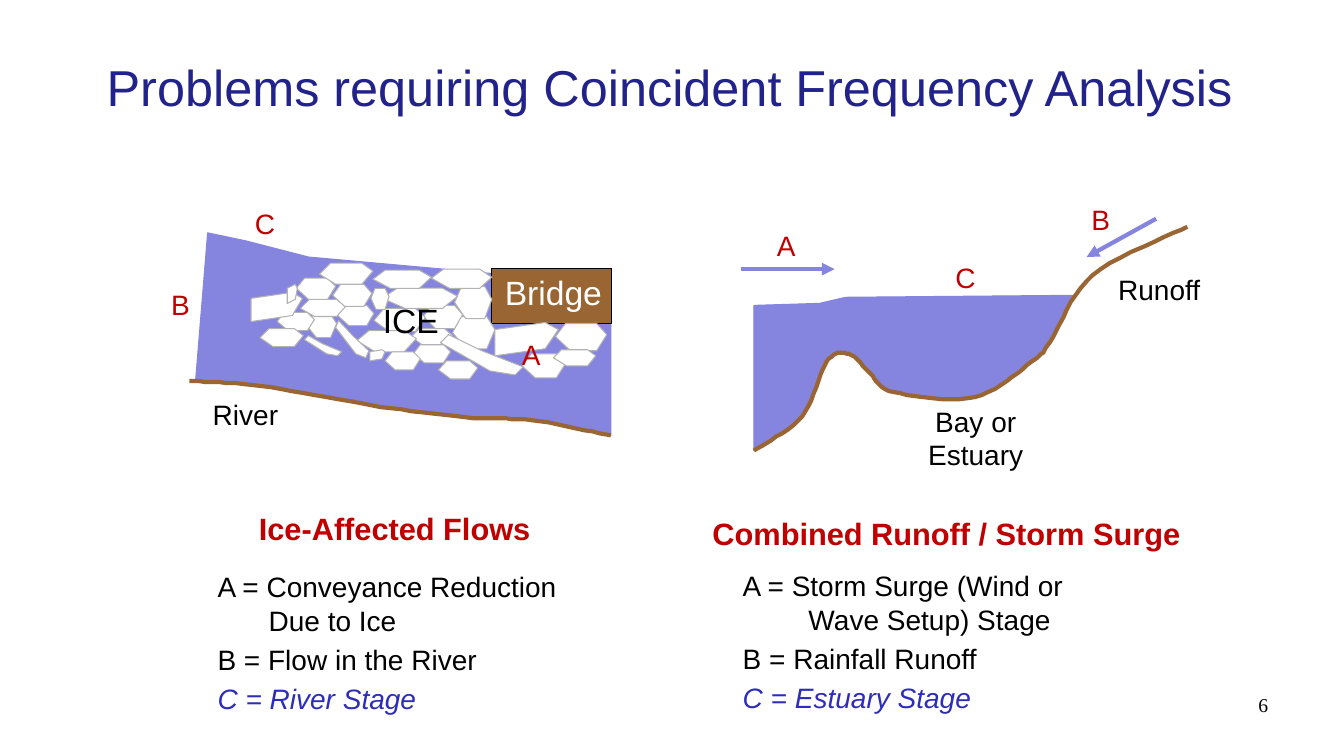
from pptx import Presentation
from pptx.dml.color import RGBColor
from pptx.enum.shapes import MSO_CONNECTOR as Connector, MSO_SHAPE as Preset
from pptx.enum.text import MSO_ANCHOR as Anchor, PP_ALIGN as Align
from pptx.oxml.ns import qn
from pptx.util import Pt
from lxml.etree import SubElement

WATER, EARTH, RED, BLACK, WHITE = "8585E0", "996633", "C00000", "000000", "FFFFFF"
EDGE, BLUE, NAVY = "B2B2B2", "2D2DB9", "22228B"

# Drawing grid: one unit is 0.72 pt, so the slide is 1333 x 750 units
GRID = 0.72

# Knots of the beds, and the water surfaces from right to left
BAY_BED = [(748, 447), (796, 413), (820, 359), (842, 351), (862, 369), (887, 389),
           (967, 394), (1023, 359), (1042, 339), (1084, 273), (1178, 225)]
BAY_SURFACE = [(1067, 293), (839, 295), (813, 301), (748, 303)]
RIVER_BED = [(188, 378), (259, 383), (368, 402), (462, 414), (528, 417), (606, 432)]
RIVER_SURFACE = [(606, 290), (495, 272), (306, 255), (244, 239), (206, 231), (194, 378)]

# Floe outlines in tenths of their box, each with the boxes it fills
BLOCK = [(2, 0), (8, 0), (10, 4), (8, 10), (3, 10), (0, 5)]
WEDGE = [(10, 2), (8, 8), (0, 10), (0, 2), (8, 0)]
SPLINTER = [(1, 0), (5, 4), (10, 8), (9, 10), (6, 9), (0, 2)]
FLOES = [
    (BLOCK, [(551, 321, 51, 27), (449, 314, 42, 32), (420, 303, 39, 23), (408, 326, 41, 17),
             (518, 351, 43, 24), (549, 347, 42, 16), (435, 358, 39, 18), (410, 342, 37, 18),
             (371, 306, 51, 23), (354, 328, 59, 21), (382, 349, 35, 18), (335, 303, 36, 20),
             (305, 312, 29, 23), (298, 297, 45, 17), (275, 310, 37, 18), (294, 276, 39, 21),
             (258, 326, 43, 18), (451, 284, 37, 32), (330, 282, 39, 22), (379, 286, 75, 20),
             (368, 286, 18, 21), (428, 267, 60, 19), (370, 268, 58, 18), (317, 261, 53, 21)]),
    (WEDGE, [(491, 320, 63, 33), (249, 290, 51, 29), (367, 347, 15, 11), (285, 282, 10, 19)]),
    (SPLINTER, [(437, 332, 82, 40), (333, 318, 33, 37), (302, 333, 37, 20)])]

# Text formats
LABEL = {"name": "Arial", "size": Pt(20)}
BIG = {**LABEL, "size": Pt(24)}
HEADING = {**LABEL, "size": Pt(22), "bold": True}
TITLE = {**LABEL, "size": Pt(36)}
RESULT = {**LABEL, "italic": True}
PAGE = {"name": "Times New Roman", "size": Pt(14)}


def grid(*units):
    return [Pt(GRID * unit) for unit in units]


def paint(target, colour):
    """Colour a fill, or a font colour."""
    if hasattr(target, "solid"):
        target.solid()
        target = target.fore_color
    target.rgb = RGBColor.from_string(colour)


def outline(shape, colour, width):
    paint(shape.line.fill, colour)
    shape.line.width = Pt(width)


def write(paragraph, words, style, colour):
    paragraph.text = words
    for run in paragraph.runs:
        for key, value in style.items():
            setattr(run.font, key, value)
        paint(run.font.color, colour)


def add_text(shapes, words, box, style, colour, align=Align.LEFT, wrap=True, anchor=Anchor.TOP):
    frame = shapes.add_textbox(*grid(*box)).text_frame
    frame.word_wrap = wrap
    frame.vertical_anchor = anchor
    frame.paragraphs[0].alignment = align
    write(frame.paragraphs[0], words, style, colour)
    return frame


def add_legend(shapes, entries, box, hang):
    """Three definitions; the broken line of the first one hangs."""
    frame = add_text(shapes, entries[0], box, LABEL, BLACK, wrap=False)
    for words, style, colour in zip(entries[1:], (LABEL, RESULT), (BLACK, BLUE)):
        paragraph = frame.add_paragraph()
        paragraph.space_before = Pt(4)
        write(paragraph, words, style, colour)
    for paragraph in frame.paragraphs:
        margins = paragraph._p.get_or_add_pPr()
        margins.set("marL", str(Pt(hang)))
        margins.set("indent", str(-Pt(hang)))


def smooth(knots, steps=10):
    """Points of a Catmull-Rom curve through the knots."""
    padded = [knots[0], *knots, knots[-1]]
    curve = [knots[0]]
    for before, start, end, after in zip(padded, padded[1:], padded[2:], padded[3:]):
        for step in range(1, steps + 1):
            t = step / steps
            curve.append(tuple(
                b + t / 2 * (c - a + t * (2 * a - 5 * b + 4 * c - d + t * (3 * (b - c) + d - a)))
                for a, b, c, d in zip(before, start, end, after)))
    return curve


def add_outline(shapes, points, closed=True):
    builder = shapes.build_freeform(*points[0], scale=Pt(GRID))
    builder.add_line_segments(points[1:], close=closed)
    shape = builder.convert_to_shape()
    shape.shadow.inherit = False
    return shape


def add_area(shapes, points, colour, edge):
    area = add_outline(shapes, points)
    paint(area.fill, colour)
    outline(area, edge, 0.75)


def add_water_on_bed(shapes, knots, surface):
    """Fill between the bed and the surface, then draw the bed."""
    curve = smooth(knots)
    right, top = surface[0]
    left = surface[-1][0]
    wet = [(x, y) for x, y in curve if left <= x <= right and y >= top]
    add_area(shapes, wet + surface, WATER, WATER)
    bed = add_outline(shapes, curve, closed=False)
    bed.fill.background()
    outline(bed, EARTH, 3)


def add_arrow(shapes, *ends):
    arrow = shapes.add_connector(Connector.STRAIGHT, *grid(*ends))
    outline(arrow, WATER, 3)
    SubElement(arrow.line._get_or_add_ln(), qn("a:tailEnd"), type="triangle")
    SubElement(arrow._element.spPr, qn("a:effectLst"))


def add_river(shapes):
    add_water_on_bed(shapes, RIVER_BED, RIVER_SURFACE)
    bridge = shapes.add_shape(Preset.RECTANGLE, *grid(488, 266, 119, 55))
    bridge.shadow.inherit = False
    paint(bridge.fill, EARTH)
    outline(bridge, BLACK, 0.75)
    add_text(shapes, "Bridge", (491, 265, 117, 50), BIG, WHITE, wrap=False)
    for floe, boxes in FLOES:
        for left, top, width, height in boxes:
            corners = [(left + width * x / 10, top + height * y / 10) for x, y in floe]
            add_area(shapes, corners, WHITE, EDGE)
    add_text(shapes, "ICE", (370, 293, 76, 50), BIG, BLACK)


def add_bay(shapes):
    add_water_on_bed(shapes, BAY_BED, BAY_SURFACE)
    add_arrow(shapes, 735, 267, 828, 267)
    add_arrow(shapes, 1147, 217, 1078, 255)


def main():
    deck = Presentation()
    deck.slide_width, deck.slide_height = Pt(960), Pt(540)
    shapes = deck.slides.add_slide(deck.slide_layouts[6]).shapes

    add_text(shapes, "Problems requiring Coincident Frequency Analysis",
             (96, 23, 1188, 125), TITLE, NAVY, anchor=Anchor.MIDDLE)

    # Drawings
    add_bay(shapes)
    add_river(shapes.add_group_shape().shapes)

    # Place names
    for place, box in (("Bay or\vEstuary", (867, 396, 202, 77)),
                       ("Runoff", (1099, 265, 102, 43)), ("River", (201, 389, 85, 43))):
        add_text(shapes, place, box, LABEL, BLACK, Align.CENTER, wrap=False)

    # Letters that the legends explain
    for letter, left, top in (("A", 508, 330), ("B", 160, 280), ("C", 243, 200),
                              ("A", 761, 222), ("B", 1073, 196), ("C", 938, 254)):
        add_text(shapes, letter, (left, top, 50, 43), LABEL, RED)

    # Headings and legends
    add_text(shapes, "Ice-Affected Flows", (247, 501, 294, 47), HEADING, RED, wrap=False)
    add_text(shapes, "Combined Runoff / Storm Surge", (697, 506, 491, 47), HEADING, RED,
             wrap=False)
    add_legend(shapes, ("A = Conveyance Reduction\vDue to Ice", "B = Flow in the River",
                        "C = River Stage"), (206, 560, 357, 153), 36.5)
    add_legend(shapes, ("A = Storm Surge (Wind or\vWave Setup) Stage", "B = Rainfall Runoff",
                        "C = Estuary Stage"), (727, 559, 357, 153), 47)

    # Page number
    add_text(shapes, "6", (990, 683, 278, 50), PAGE, BLACK, Align.RIGHT)
    deck.save("out.pptx")


if __name__ == "__main__":
    main()
